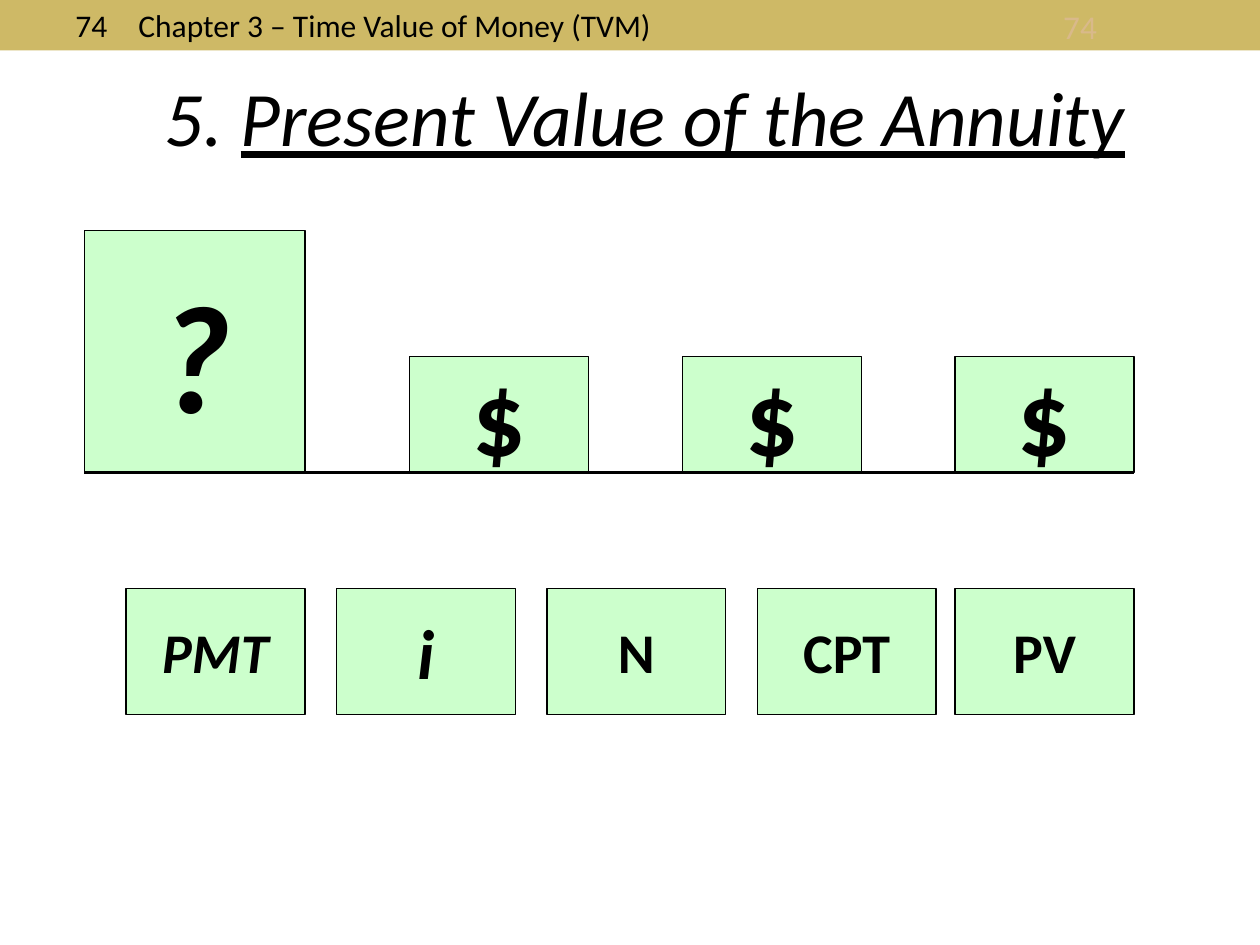
from pptx import Presentation
from pptx.dml.color import RGBColor
from pptx.enum import shapes, text
from pptx.oxml import ns
from pptx.util import Inches, Pt

BLACK, GOLD, GREEN, FAINT = "000000", "CEB966", "CCFFCC", "D9B98A"
KIND = shapes.MSO_SHAPE


def rgb(code):
    return RGBColor.from_string(code)


def style(par, size, color=BLACK, bold=False, slant=False):
    font = par.font
    font.name, font.size = "Calibri", Pt(size)
    font.bold, font.italic = bold, slant
    font.color.rgb = rgb(color)


def add_box(slide, kind, box, fill, edge=None):
    shape = slide.shapes.add_shape(kind, *map(Inches, box))
    shape.shadow.inherit = False
    shape.fill.solid()
    shape.fill.fore_color.rgb = rgb(fill)
    if edge:
        shape.line.color.rgb = rgb(edge)
        shape.line.width = Pt(0.75)
    else:
        shape.line.fill.background()
    return shape


def add_key(slide, kind, box, label, size, slant=False):
    """Green box with a bold centred label."""
    frame = add_box(slide, kind, box, GREEN, BLACK).text_frame
    frame.word_wrap = False
    frame.vertical_anchor = text.MSO_ANCHOR.MIDDLE
    par = frame.paragraphs[0]
    par.text, par.alignment = label, text.PP_ALIGN.CENTER
    style(par, size, bold=True, slant=slant)


def add_text(slide, box, words, size, color):
    area = slide.shapes.add_textbox(*map(Inches, box))
    area.text_frame.word_wrap = True
    par = area.text_frame.paragraphs[0]
    par.text = words
    style(par, size, color)
    return par


def add_header(slide, left, top, width, height):
    # Gold band, chapter line and faint page number
    add_box(slide, KIND.RECTANGLE, (left, top, width, height), GOLD)
    par = add_text(slide, (left, top, 6.42, height),
                   "74\tChapter 3 – Time Value of Money (TVM)", 18, BLACK)
    par.level = 1
    props = par._p.get_or_add_pPr()
    props.set("marL", str(Inches(0.5)))
    props.set("indent", "0")
    add_text(slide, (left + 8.34, top, 1, height), "74", 19, FAINT)


def add_title(slide, left, top, width, height):
    title = slide.shapes.title
    title.left, title.top = Inches(left), Inches(top)
    title.width, title.height = Inches(width), Inches(height)
    frame = title.text_frame
    frame.word_wrap = False
    frame.auto_size = text.MSO_AUTO_SIZE.SHAPE_TO_FIT_TEXT
    par = frame.paragraphs[0]
    par.alignment = text.PP_ALIGN.CENTER
    style(par, 44, slant=True)
    par.add_run().text = "5. "
    name = par.add_run()
    name.text = "Present Value of the Annuity"
    name.font.underline = True


def add_flow(slide, left, top, width, height):
    # Unknown present value, then three equal payments on a base line
    base, right = top + height, left + width
    wide, tall, step = 1.42, 0.92, 2.165
    kind = KIND.FLOWCHART_PROCESS
    add_key(slide, kind, (left, top, 1.75, height), "?", 88, True)
    for back in (2, 1, 0):
        spot = (right - wide - back * step, base - tall, wide, tall)
        add_key(slide, kind, spot, "$", 60)
    line = slide.shapes.add_connector(
        shapes.MSO_CONNECTOR.STRAIGHT,
        *map(Inches, (left, base, right, base)))
    line.line.color.rgb = rgb(BLACK)
    line.line.width = Pt(2.25)
    props = line._element.spPr
    props.append(props.makeelement(ns.qn("a:effectLst"), {}))


def add_keys(slide, left, top, width, height):
    # Calculator keys: even steps, the last flush with the right edge
    wide, step = 1.42, 1.67
    keys = [("PMT", 32, True), ("i", 40, True), ("N", 32, False),
            ("CPT", 32, False), ("PV", 32, False)]
    for n, (label, size, slant) in enumerate(keys):
        x = min(left + n * step, left + width - wide)
        add_key(slide, KIND.RECTANGLE, (x, top, wide, height),
                label, size, slant)


def main():
    deck = Presentation()
    deck.slide_width, deck.slide_height = Inches(10), Inches(7.5)
    slide = deck.slides.add_slide(deck.slide_layouts[5])
    add_header(slide, 0, 0, 10, 0.4)
    add_title(slide, 1.04, 0.5, 8.16, 0.84)
    add_flow(slide, 0.67, 1.83, 8.33, 1.92)
    add_keys(slide, 1, 4.67, 8, 1)
    deck.save("out.pptx")


if __name__ == "__main__":
    main()
